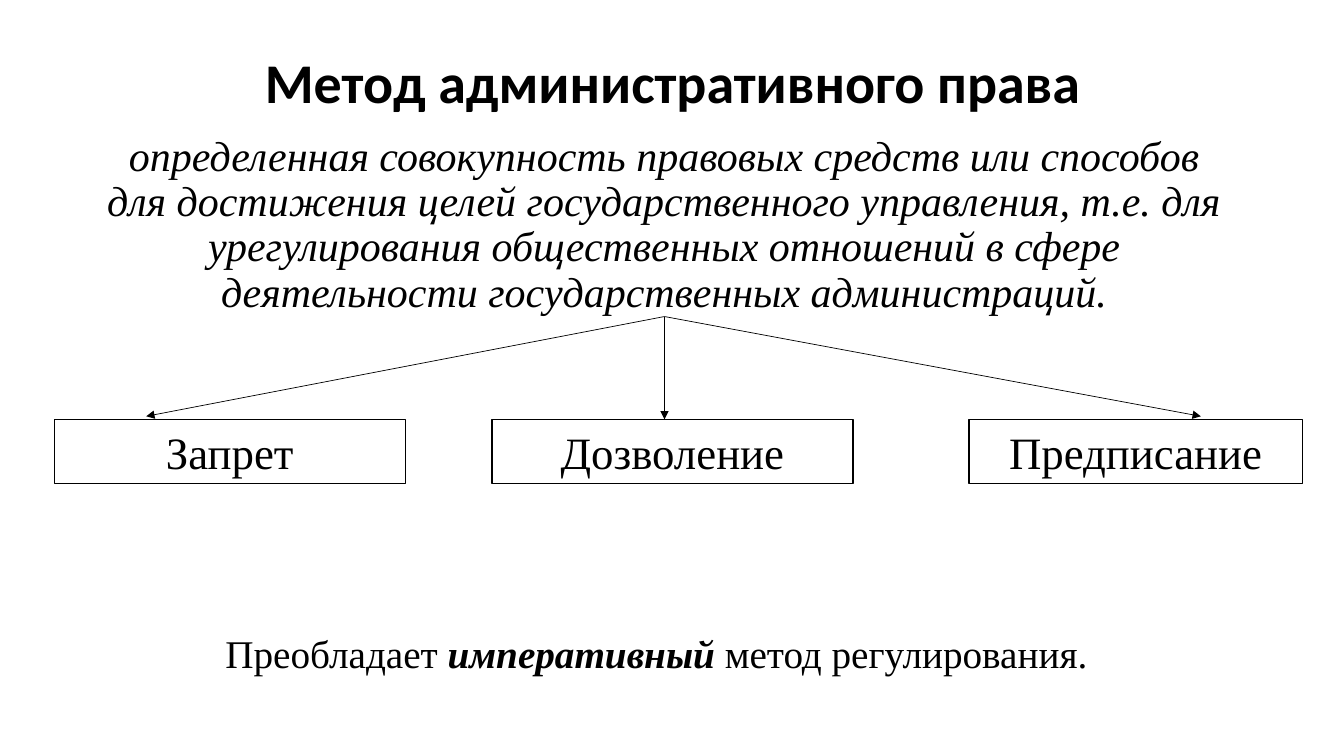
from lxml import etree
from pptx import Presentation
from pptx.dml.color import RGBColor
from pptx.enum.shapes import MSO_CONNECTOR, MSO_SHAPE
from pptx.enum.text import MSO_ANCHOR, PP_ALIGN
from pptx.oxml.ns import qn
from pptx.util import Inches, Pt

RECT = MSO_SHAPE.RECTANGLE
STRAIGHT = MSO_CONNECTOR.STRAIGHT
TOP, MIDDLE = MSO_ANCHOR.TOP, MSO_ANCHOR.MIDDLE
CENTER = PP_ALIGN.CENTER

WIDTH, HEIGHT = Inches(13.33), Inches(7.5)
COLORS = {"ink": "000000", "paper": "FFFFFF"}
SERIF = "Times New Roman"

# Positions are percentages of the slide's width and height
BOX_TOP, BOX_HEIGHT = 55.47, 8.53
ARROW_START = (49.44, 41.87)
METHODS = [  # label, box left, box width, arrow end
    ("Запрет", 4.05, 26.11, (10.88, 55.07)),
    ("Дозволение", 36.61, 26.86, (49.44, BOX_TOP)),
    ("Предписание", 72.09, 24.83, (89.35, 55.07)),
]


def color(name):
    return RGBColor.from_string(COLORS[name])


def place(*shares):
    """Turn alternating x and y percentages into slide lengths."""
    return [int(share * (HEIGHT if i % 2 else WIDTH) / 100)
            for i, share in enumerate(shares)]


def write(sp, runs, font, anchor=TOP, **spacing):
    """Fill a shape with one centred paragraph of (text, format) runs."""
    tf = sp.text_frame
    tf.word_wrap = True
    tf.vertical_anchor = anchor
    p = tf.paragraphs[0]
    p.alignment = CENTER
    for name, value in spacing.items():
        setattr(p, name, value)
    for text, extra in runs:
        r = p.add_run()
        r.text = text
        r.font.color.rgb = color("ink")
        for name, value in {**font, **extra}.items():
            setattr(r.font, name, value)


def add_text(slide, box, runs, font, **layout):
    write(slide.shapes.add_textbox(*place(*box)), runs, font, **layout)


def add_box(slide, box, label):
    sp = slide.shapes.add_shape(RECT, *place(*box))
    sp.shadow.inherit = False
    sp.fill.solid()
    sp.fill.fore_color.rgb = color("paper")
    sp.line.color.rgb = color("ink")
    sp.line.width = Pt(1)
    write(sp, [(label, {})], {"name": SERIF, "size": Pt(32)})


def add_arrow(slide, start, end):
    cxn = slide.shapes.add_connector(STRAIGHT, *place(*start, *end))
    cxn.line.color.rgb = color("ink")
    cxn.line.width = Pt(0.5)
    etree.SubElement(cxn.line._get_or_add_ln(), qn("a:tailEnd"), type="triangle")
    etree.SubElement(cxn._element.spPr, qn("a:effectLst"))


def main():
    prs = Presentation()
    prs.slide_width, prs.slide_height = WIDTH, HEIGHT
    slide = prs.slides.add_slide(prs.slide_layouts[6])

    # Title and definition
    add_text(slide, (6.9, 5.33, 86.27, 11.87),
             [("Метод административного права", {})],
             {"name": "Calibri", "size": Pt(40), "bold": True},
             anchor=MIDDLE, line_spacing=0.9)
    add_text(slide, (6.3, 17.2, 86.27, 24.67),
             [("определенная совокупность правовых средств или способов "
               "для достижения целей государственного управления, т.е. для "
               "урегулирования общественных отношений в сфере "
               "деятельности государственных администраций.", {})],
             {"name": SERIF, "size": Pt(30), "italic": True},
             line_spacing=0.9, space_before=Pt(10))

    # Methods, each with an arrow from the definition
    for label, left, width, arrow_end in METHODS:
        add_arrow(slide, ARROW_START, arrow_end)
        add_box(slide, (left, BOX_TOP, width, BOX_HEIGHT), label)

    # Conclusion
    add_text(slide, (11.4, 82.53, 74.87, 7.6),
             [("Преобладает ", {}),
              ("императивный ", {"bold": True, "italic": True}),
              ("метод регулирования.", {})],
             {"name": SERIF, "size": Pt(28)})

    prs.save("out.pptx")


if __name__ == "__main__":
    main()
